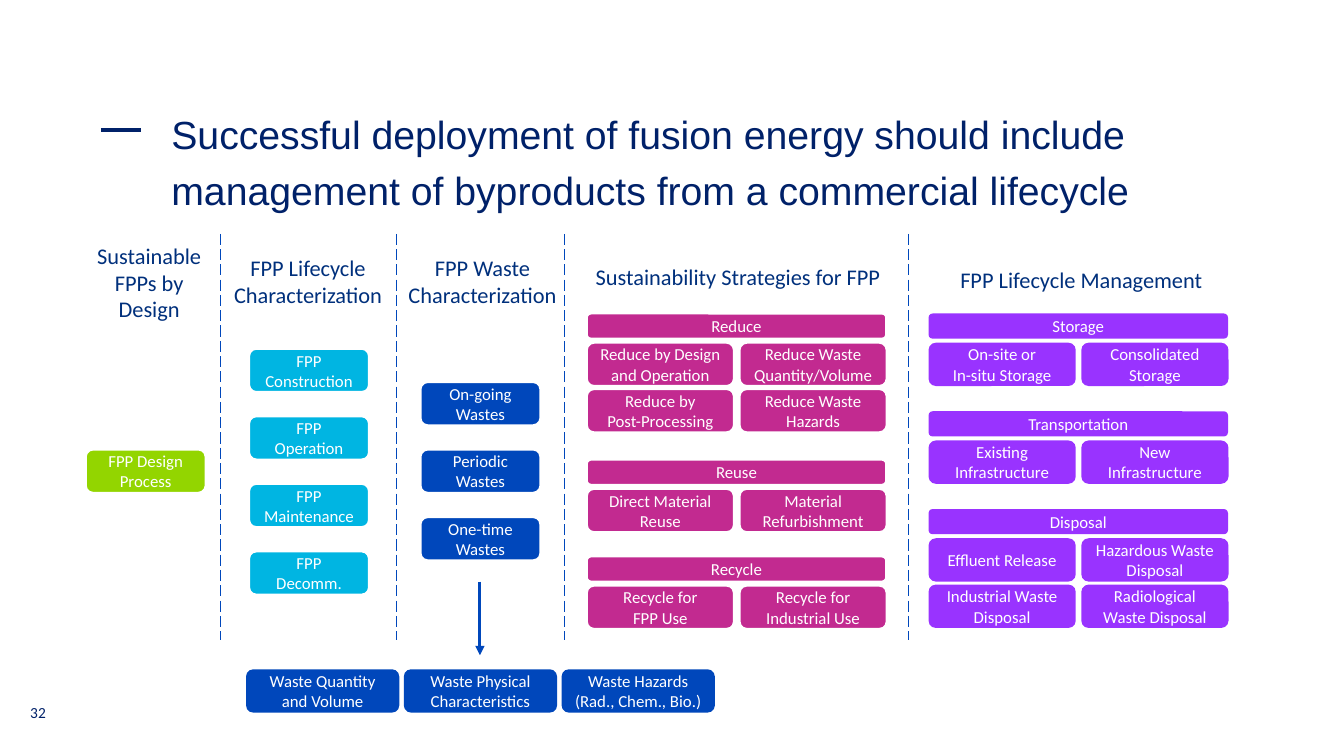
"""Build the slide on fusion byproduct management, on a grid of tenth-inch cells."""
from dataclasses import dataclass

from lxml.etree import SubElement
from pptx import Presentation
from pptx.dml.color import RGBColor
from pptx.enum.dml import MSO_LINE_DASH_STYLE as Dash
from pptx.enum.shapes import MSO_CONNECTOR_TYPE as Connector, MSO_SHAPE as Shape
from pptx.enum.text import MSO_ANCHOR as Anchor, MSO_AUTO_SIZE as Fit, PP_ALIGN as Align
from pptx.oxml.ns import qn
from pptx.util import Inches, Pt


@dataclass(frozen=True)
class Theme:
    navy: str = "002169"
    heading: str = "00307C"
    blue: str = "0047BB"
    cyan: str = "00B5E2"
    green: str = "93D500"
    magenta: str = "C22A90"
    purple: str = "9933FF"
    white: str = "FFFFFF"
    title_font: str = "Arial"
    body_font: str = "Calibri"
    title_size: int = 28
    heading_size: int = 16
    label_size: int = 12
    number_size: int = 11


THEME = Theme()
CARD_HEIGHT = 4.3
STEP = 6.7
STAGE_WIDTH = 11.9
OUTPUT_WIDTH, OUTPUT_PITCH = 15.2, 15.65
STRATEGY_WIDTH, STRATEGY_PITCH = 14.6, 15.15

HEADINGS = [
    ("Sustainable\nFPPs by\nDesign", 8.6, 23.5, 12.4, 8.2),
    ("FPP Lifecycle\nCharacterization", 22.1, 24.7, 16.9, 5.8),
    ("FPP Waste\nCharacterization", 39.4, 24.7, 16.9, 5.8),
    ("Sustainability Strategies for FPP", 57.9, 25.6, 30.6, 3.4),
    ("FPP Lifecycle Management", 94.1, 25.9, 26.3, 3.4),
]
STAGES = [
    (8.5, 44.6, THEME.green, ["FPP Design Process"]),
    (24.7, 34.6, THEME.cyan, ["FPP\nConstruction", "FPP\nOperation",
                              "FPP\nMaintenance", "FPP\nDecomm."]),
    (41.7, 37.9, THEME.blue, ["On-going Wastes", "Periodic Wastes", "One-time Wastes"]),
]
STRATEGIES = [
    (31.1, "Reduce", ["Reduce by Design and Operation", "Reduce Waste Quantity/Volume",
                      "Reduce by\nPost-Processing", "Reduce Waste Hazards"]),
    (45.6, "Reuse", ["Direct Material Reuse", "Material Refurbishment"]),
    (55.2, "Recycle", ["Recycle for\nFPP Use", "Recycle for Industrial Use"]),
]
MANAGEMENT = [
    (31.1, "Storage", ["On-site or\nIn-situ Storage", "Consolidated Storage"]),
    (40.8, "Transportation", ["Existing Infrastructure", "New Infrastructure"]),
    (50.5, "Disposal", ["Effluent Release", "Hazardous Waste Disposal",
                        "Industrial Waste Disposal", "Radiological Waste Disposal"]),
]
OUTPUTS = ["Waste Quantity and Volume", "Waste Physical\nCharacteristics",
           "Waste Hazards (Rad., Chem., Bio.)"]


def cells(*counts):
    return [Inches(count / 10) for count in counts]


def write(frame, text, size=THEME.label_size, color=THEME.white, font=THEME.body_font,
          align=Align.CENTER, anchor=Anchor.TOP, wrap=True, spacing=None):
    frame.text = text
    frame.word_wrap = wrap
    frame.vertical_anchor = anchor
    frame.auto_size = Fit.NONE
    for para in frame.paragraphs:
        para.alignment = align
        para.line_spacing = spacing
        for span in para.runs:
            span.font.size = Pt(size)
            span.font.name = font
            span.font.color.rgb = RGBColor.from_string(color)


def add_label(slide, text, left, top, width, height, **text_format):
    box = slide.shapes.add_textbox(*cells(left, top, width, height))
    write(box.text_frame, text, **text_format)
    return box


def add_card(slide, text, left, top, width, fill, height=CARD_HEIGHT, outlined=True):
    card = slide.shapes.add_shape(Shape.ROUNDED_RECTANGLE, *cells(left, top, width, height))
    card.shadow.inherit = False
    card.fill.solid()
    card.fill.fore_color.rgb = RGBColor.from_string(fill)
    if outlined:
        card.line.color.rgb = RGBColor.from_string(THEME.white)
        card.line.width = Pt(1.5)
    else:
        card.line.fill.background()
    write(card.text_frame, text, anchor=Anchor.MIDDLE)


def add_line(slide, start, end, color=THEME.blue, weight=1, dash=None, arrow=False):
    line = slide.shapes.add_connector(Connector.STRAIGHT, *cells(*start, *end))
    line.line.color.rgb = RGBColor.from_string(color)
    line.line.width = Pt(weight)
    if dash:
        line.line.dash_style = dash
    properties = line._element.spPr
    if arrow:
        SubElement(properties.find(qn("a:ln")), qn("a:tailEnd"), type="triangle")
    SubElement(properties, qn("a:effectLst"))


def add_family(slide, left, groups, fill, gap, outlined):
    for top, name, members in groups:
        add_card(slide, name, left, top, 29.7, fill, height=2.5, outlined=outlined)
        for index, member in enumerate(members):
            row, column = divmod(index, 2)
            add_card(slide, member, left + column * STRATEGY_PITCH, top + gap + row * 4.6,
                     STRATEGY_WIDTH, fill, outlined=outlined)


def add_title(slide, text):
    title = slide.shapes.title
    title.left, title.top, title.width, title.height = cells(17, 10, 99.6, 10.9)
    frame = title.text_frame
    frame.margin_left = frame.margin_right = frame.margin_top = frame.margin_bottom = 0
    write(frame, text, size=THEME.title_size, color=THEME.navy, font=THEME.title_font,
          align=Align.LEFT, spacing=1.2)


def main():
    deck = Presentation()
    deck.slide_width, deck.slide_height = cells(133.3, 75)
    slide = deck.slides.add_slide(deck.slide_layouts[5])

    add_line(slide, (10, 12.9), (14, 12.9), color=THEME.navy, weight=2.5)
    add_title(slide, "Successful deployment of fusion energy should include "
                     "management of byproducts from a commercial lifecycle")
    number = add_label(slide, "32", 3, 69.3, 4.8, 4, size=THEME.number_size,
                       color=THEME.navy, align=Align.LEFT)
    number.text_frame.margin_left = number.text_frame.margin_right = 0

    for column in (21.9, 39.3, 56, 90.1):
        add_line(slide, (column, 23.2), (column, 63.5), dash=Dash.LONG_DASH)
    for text, *place in HEADINGS:
        add_label(slide, text, *place, size=THEME.heading_size, color=THEME.heading, wrap=False)

    for left, top, fill, names in STAGES:
        for row, name in enumerate(names):
            add_card(slide, name, left, top + row * STEP, STAGE_WIDTH, fill)
    add_family(slide, 58.2, STRATEGIES, THEME.magenta, gap=2.9, outlined=True)
    add_family(slide, 92.1, MANAGEMENT, THEME.purple, gap=2.9, outlined=False)

    add_line(slide, (47.6, 57.7), (47.6, 65), weight=2.25, arrow=True)
    for column, name in enumerate(OUTPUTS):
        add_card(slide, name, 24.4 + column * OUTPUT_PITCH, 66.4, OUTPUT_WIDTH,
                 THEME.blue, outlined=False)

    deck.save("out.pptx")


if __name__ == "__main__":
    main()
